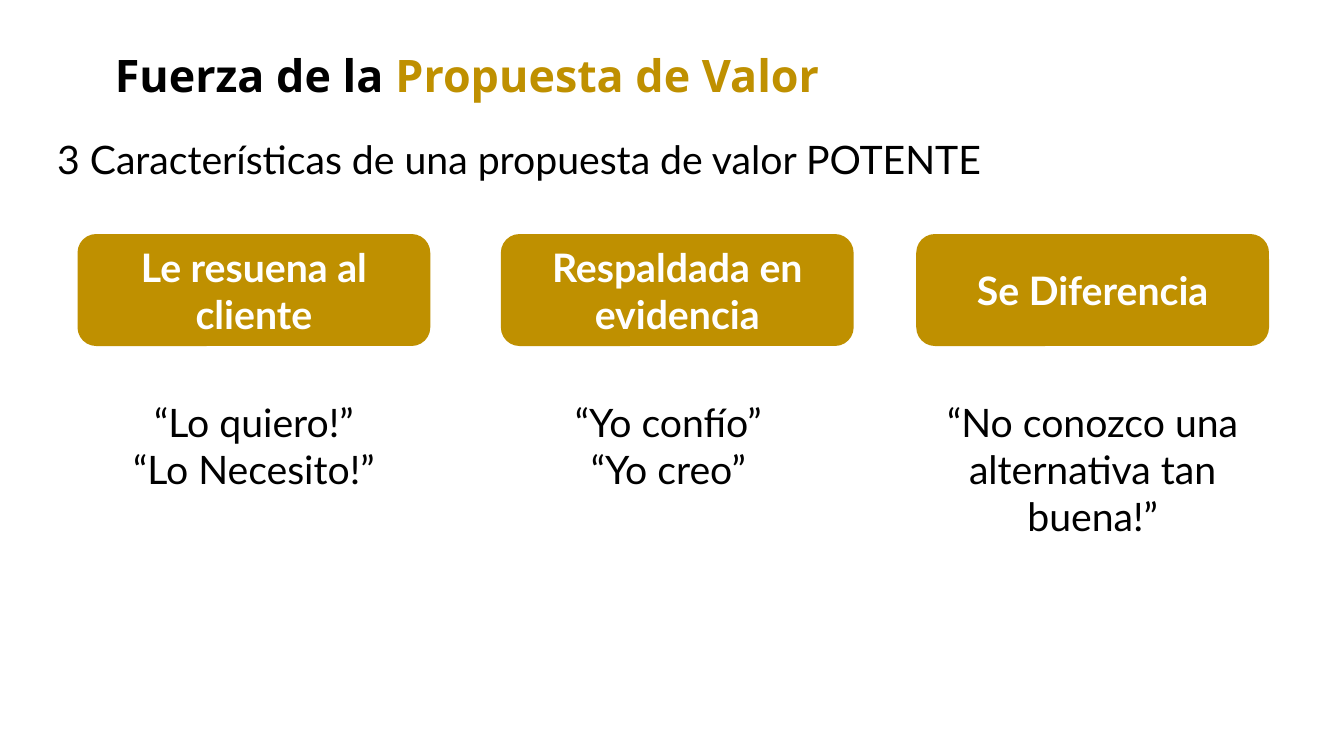
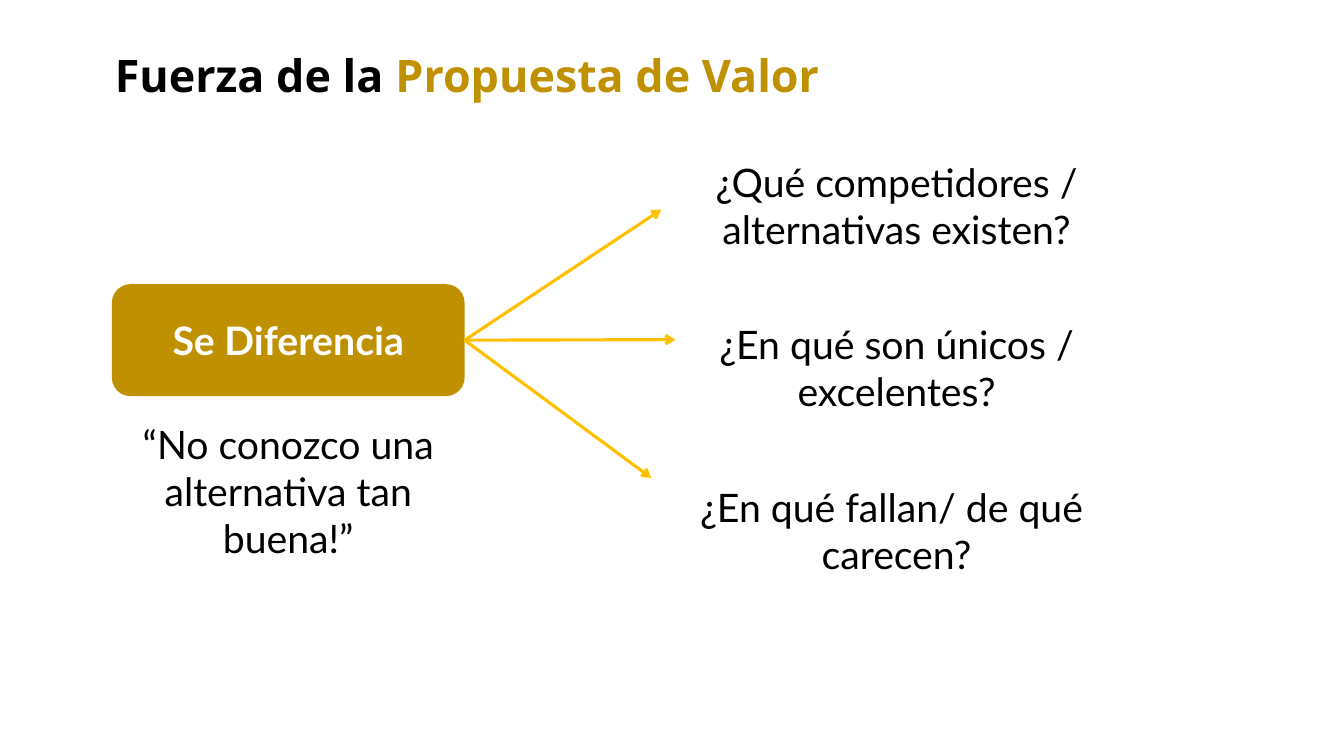
from lxml import etree
from pptx import Presentation
from pptx.dml.color import RGBColor
from pptx.enum import shapes, text
from pptx.oxml import ns
from pptx.util import Pt

# Shared style
BLACK, WHITE, GOLD, AMBER = "000000", "FFFFFF", "BF9000", "FFC000"
TITLE_FONT, BODY_FONT = "Noto Sans", "Lato"
TITLE_SIZE, BODY_SIZE = 32, 28
CARD_WIDTH, CARD_HEIGHT = 252, 80

# Content
TITLE = [("Fuerza de la ", BLACK), ("Propuesta de Valor", GOLD)]
SUBTITLE = "3 Características de una propuesta de valor POTENTE"
DIFFERENCE = ("Se Diferencia", ["“No conozco una alternativa tan buena!”"])
# Card left, quote left, (heading, quotes)
FEATURES = [
    (55.4, 55.4, ("Le resuena al cliente", ["“Lo quiero!”", "“Lo Necesito!”"])),
    (357.8, 351.4, ("Respaldada en evidencia", ["“Yo confío”", "“Yo creo”"])),
    (654.5, 654.5, DIFFERENCE),
]
# Question lines, arrow tip
QUESTIONS = [
    (["¿Qué competidores / alternativas existen?"], (472.3, 149.8)),
    (["¿En qué son únicos / excelentes?"], (482.4, 242.6)),
    (["¿En qué fallan/ de qué ", "carecen?"], (465.1, 341.3)),
]


def color(hex_value):
    return RGBColor.from_string(hex_value)


def add_run(paragraph, words, hex_color, font=BODY_FONT, size=BODY_SIZE, bold=False):
    run = paragraph.add_run()
    run.text = words
    run.font.name, run.font.size, run.font.bold = font, Pt(size), bold
    run.font.color.rgb = color(hex_color)


def set_frame(frame, anchor, horizontal=7.2, vertical=3.6):
    frame.word_wrap = True
    frame.auto_size = text.MSO_AUTO_SIZE.NONE
    frame.vertical_anchor = anchor
    frame.margin_left = frame.margin_right = Pt(horizontal)
    frame.margin_top = frame.margin_bottom = Pt(vertical)


def add_text(slide, lines, left, top, width, height, align=text.PP_ALIGN.CENTER):
    box = slide.shapes.add_textbox(Pt(left), Pt(top), Pt(width), Pt(height))
    set_frame(box.text_frame, text.MSO_ANCHOR.TOP)
    for index, line in enumerate(lines):
        paragraph = box.text_frame.add_paragraph() if index else box.text_frame.paragraphs[0]
        paragraph.alignment = align
        add_run(paragraph, line, BLACK)


def add_titled_slide(presentation):
    slide = presentation.slides.add_slide(presentation.slide_layouts[5])
    title = slide.shapes.title
    title.left, title.top, title.width, title.height = Pt(77), Pt(32.4), Pt(678), Pt(85)
    set_frame(title.text_frame, text.MSO_ANCHOR.TOP, 5, 2)
    paragraph = title.text_frame.paragraphs[0]
    paragraph.alignment = text.PP_ALIGN.LEFT
    for words, hex_color in TITLE:
        add_run(paragraph, words, hex_color, TITLE_FONT, TITLE_SIZE, True)
    return slide


def add_feature(slide, left, top, quote_left, quote_top, feature):
    heading, quotes = feature
    card = slide.shapes.add_shape(shapes.MSO_SHAPE.ROUNDED_RECTANGLE,
                                  Pt(left), Pt(top), Pt(CARD_WIDTH), Pt(CARD_HEIGHT))
    card.shadow.inherit = False
    card.fill.solid()
    card.fill.fore_color.rgb = color(GOLD)
    card.line.fill.background()
    set_frame(card.text_frame, text.MSO_ANCHOR.MIDDLE)
    paragraph = card.text_frame.paragraphs[0]
    paragraph.alignment = text.PP_ALIGN.CENTER
    add_run(paragraph, heading, WHITE, bold=True)
    add_text(slide, quotes, quote_left, quote_top, CARD_WIDTH, 109)


def add_arrow(slide, start, tip):
    arrow = slide.shapes.add_connector(shapes.MSO_CONNECTOR.STRAIGHT,
                                       *(Pt(value) for value in start + tip))
    arrow.line.color.rgb = color(AMBER)
    arrow.line.width = Pt(2.25)
    etree.SubElement(arrow.line._get_or_add_ln(), ns.qn("a:tailEnd"), type="arrow")
    etree.SubElement(arrow._element.spPr, ns.qn("a:effectLst"))


def build_features_slide(presentation):
    slide = add_titled_slide(presentation)
    add_text(slide, [SUBTITLE], 33.8, 92.9, 806, 41, text.PP_ALIGN.LEFT)
    for left, quote_left, feature in FEATURES:
        add_feature(slide, left, 167.2, quote_left, 280.6, feature)


def build_difference_slide(presentation):
    slide = add_titled_slide(presentation)
    left, top = 79.9, 203
    add_feature(slide, left, top, left, 296.6, DIFFERENCE)
    arrow_start = (left + CARD_WIDTH, top + CARD_HEIGHT / 2)
    for index, (lines, tip) in enumerate(QUESTIONS):
        add_text(slide, lines, 452.9, 109.4 + index * 116, 375, 75)
        add_arrow(slide, arrow_start, tip)


def main():
    presentation = Presentation()
    presentation.slide_width, presentation.slide_height = Pt(960), Pt(540)
    build_features_slide(presentation)
    build_difference_slide(presentation)
    presentation.save("out.pptx")


if __name__ == "__main__":
    main()
